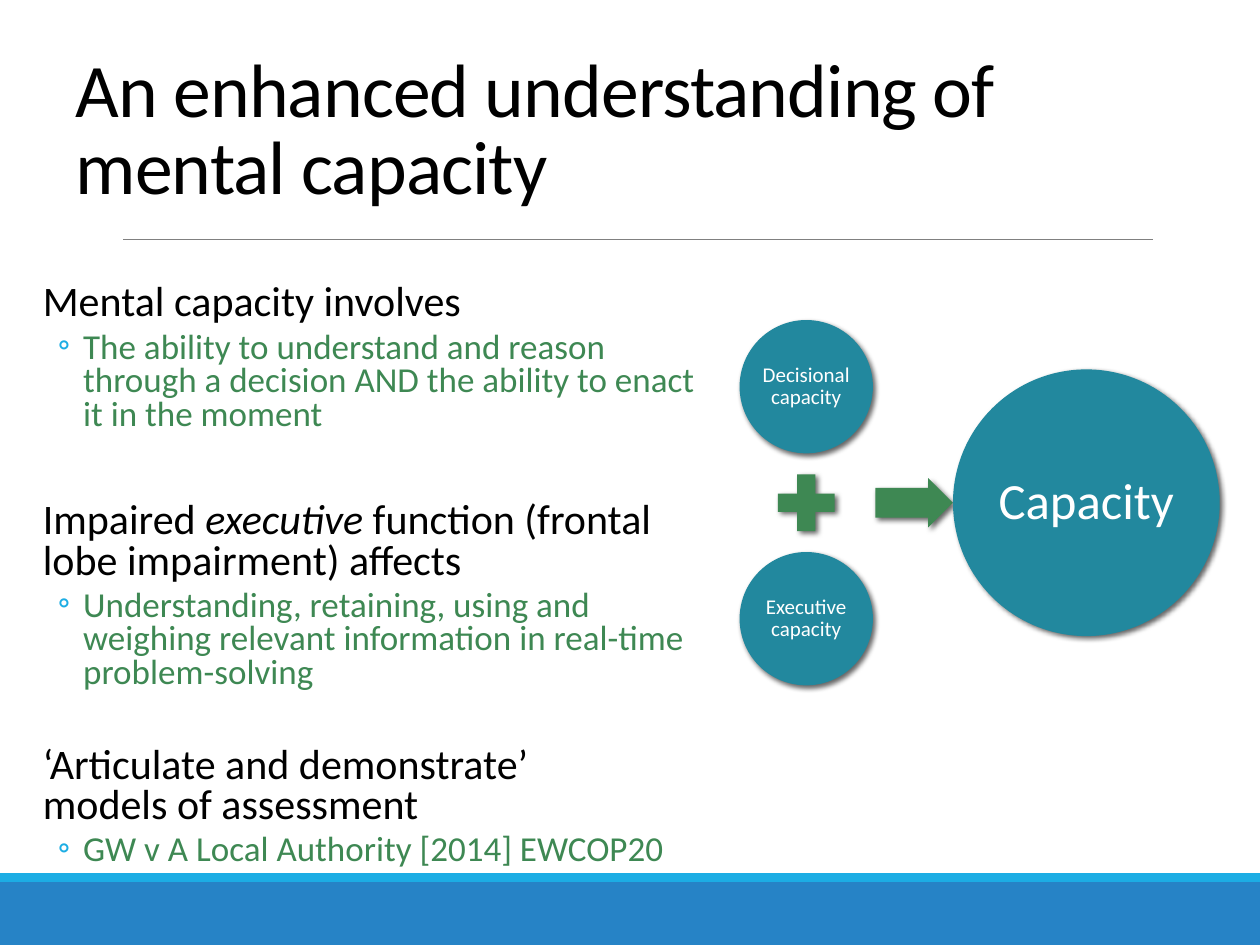
from lxml.etree import SubElement
from pptx import Presentation
from pptx.dml.color import RGBColor
from pptx.enum.shapes import MSO_CONNECTOR, MSO_SHAPE
from pptx.enum.text import MSO_ANCHOR, MSO_AUTO_SIZE, PP_ALIGN
from pptx.oxml.ns import qn
from pptx.util import Inches, Pt

WIDTH, HEIGHT = 10, 7.5
BLACK, WHITE, GREY = "000000", "FFFFFF", "808080"
BLUE, SKY, TEAL, GREEN = "2683C6", "1CADE4", "22889E", "3E8853"

# Each point: heading runs (text, italic), space before, detail line
POINTS = [
    ([("Mental capacity involves", False)], 12,
     "The ability to understand and reason through a decision AND the ability to enact it in the moment"),
    ([("Impaired ", False), ("executive", True),
      (" function (frontal lobe impairment) affects", False)], 35.8,
     "Understanding, retaining, using and weighing relevant information in real-time problem-solving"),
    ([("‘Articulate and demonstrate’\nmodels of assessment", False)], 27.8,
     "GW v A Local Authority [2014] EWCOP20"),
]


def colour(color_format, value):
    color_format.rgb = RGBColor.from_string(value)


def set_format(target, values):
    for name, value in values.items():
        setattr(target, name, value)


def place(shape, box):
    names = ("left", "top", "width", "height")
    set_format(shape, dict(zip(names, map(Inches, box))))


def set_frame(text_frame, horizontal, vertical, anchor):
    set_format(text_frame, {
        "word_wrap": True, "auto_size": MSO_AUTO_SIZE.NONE, "vertical_anchor": anchor,
        "margin_left": Inches(horizontal), "margin_right": Inches(horizontal),
        "margin_top": Inches(vertical), "margin_bottom": Inches(vertical)})


def add_text(paragraph, text, size, value, italic=False):
    for index, line in enumerate(text.split("\n")):
        if index:
            paragraph.add_line_break()
        run = paragraph.add_run()
        run.text = line
        set_format(run.font, {"name": "Calibri", "size": Pt(size), "italic": italic})
        colour(run.font.color, value)
    return run


def add_filled(shapes, preset, box, value):
    shape = shapes.add_shape(preset, *map(Inches, box))
    shape.shadow.inherit = False
    shape.fill.solid()
    colour(shape.fill.fore_color, value)
    shape.line.fill.background()
    return shape


def add_shadow(shape):
    effects = shape.element.spPr.find(qn("a:effectLst"))
    shadow = SubElement(effects, qn("a:outerShdw"), blurRad=str(Pt(3)), dist=str(Pt(2)),
                        dir=str(45 * 60000), algn="tl", rotWithShape="0")
    shadow_colour = SubElement(shadow, qn("a:srgbClr"), val=BLACK)
    SubElement(shadow_colour, qn("a:alpha"), val="60000")


def set_bullet(paragraph, indent, hanging, character=None):
    properties = paragraph._p.get_or_add_pPr()
    properties.set("marL", str(Inches(indent)))
    properties.set("indent", str(Inches(-hanging)))
    if character is None:
        SubElement(properties, qn("a:buNone"))
        return
    bullet_colour = SubElement(properties, qn("a:buClr"))
    SubElement(bullet_colour, qn("a:srgbClr"), val=SKY)
    SubElement(properties, qn("a:buFont"), typeface="Calibri")
    SubElement(properties, qn("a:buChar"), char=character)


def draw_frame(slide):
    # Footer bands and the rule below the title
    add_filled(slide.shapes, MSO_SHAPE.RECTANGLE, (0, 7, WIDTH, 0.5), BLUE)
    add_filled(slide.shapes, MSO_SHAPE.RECTANGLE, (0, 6.93, WIDTH, 0.07), SKY)
    rule = slide.shapes.add_connector(
        MSO_CONNECTOR.STRAIGHT, *map(Inches, (0.98, 1.9, 9.15, 1.9)))
    rule.line.width = Pt(0.5)
    colour(rule.line.color, GREY)
    SubElement(rule.element.spPr, qn("a:effectLst"))


def fill_title(title, box):
    place(title, box)
    set_frame(title.text_frame, 0.1, 0.05, MSO_ANCHOR.BOTTOM)
    paragraph = title.text_frame.paragraphs[0]
    set_format(paragraph, {"alignment": PP_ALIGN.LEFT, "line_spacing": 0.85})
    run = add_text(paragraph, "An enhanced understanding of mental capacity", 43.2, BLACK)
    run.font._element.set("spc", "-50")


def fill_body(body, box):
    place(body, box)
    text_frame = body.text_frame
    set_frame(text_frame, 0, 0.05, MSO_ANCHOR.TOP)
    for index, (runs, space_before, detail) in enumerate(POINTS):
        heading = text_frame.add_paragraph() if index else text_frame.paragraphs[0]
        set_format(heading, {"line_spacing": 0.8, "space_before": Pt(space_before),
                             "space_after": Pt(2)})
        set_bullet(heading, 0.1, 0)
        for text, italic in runs:
            add_text(heading, text, 24, BLACK, italic)
        item = text_frame.add_paragraph()
        set_format(item, {"level": 1, "line_spacing": 0.8, "space_before": Pt(2),
                          "space_after": Pt(4)})
        set_bullet(item, 0.42, 0.2, "◦")
        add_text(item, detail, 20, GREEN)


def draw_equation(slide, box):
    # Two small circles add up to one of twice their diameter
    left, top, width, height = box
    shapes = slide.shapes.add_group_shape().shapes
    small = height / 2.74
    large = small * 2
    middle = top + height / 2
    column = left + small / 2
    right = left + width - large / 2
    arrow_width = width - small - large - 0.02

    def add_centred(preset, x, y, part_width, part_height, value):
        part = add_filled(shapes, preset, (x - part_width / 2, y - part_height / 2,
                                           part_width, part_height), value)
        add_shadow(part)
        return part

    def add_circle(text, x, y, diameter, size):
        circle = add_centred(MSO_SHAPE.OVAL, x, y, diameter, diameter, TEAL)
        set_frame(circle.text_frame, 0, 0, MSO_ANCHOR.MIDDLE)
        paragraph = circle.text_frame.paragraphs[0]
        set_format(paragraph, {"alignment": PP_ALIGN.CENTER, "line_spacing": 0.9})
        add_text(paragraph, text, size, WHITE)

    add_circle("Decisional capacity", column, top + small / 2, small, 12)
    add_centred(MSO_SHAPE.MATH_PLUS, column, middle, small * 0.58, small * 0.58, GREEN)
    add_circle("Executive capacity", column, top + height - small / 2, small, 12)
    arrow = add_centred(MSO_SHAPE.RIGHT_ARROW, right - large / 2 - arrow_width / 2, middle,
                        arrow_width, small * 0.37, GREEN)
    arrow.adjustments[0] = 0.6
    add_circle("Capacity", right, middle, large, 29)


def main():
    presentation = Presentation()
    presentation.slide_width, presentation.slide_height = Inches(WIDTH), Inches(HEIGHT)
    slide = presentation.slides.add_slide(presentation.slide_layouts[1])
    draw_frame(slide)
    fill_title(slide.shapes.title, (0.5, 1.09, 9, 0.63))
    fill_body(slide.placeholders[1], (0.24, 2.21, 5.31, 5.08))
    draw_equation(slide, (5.87, 2.54, 3.81, 2.9))
    presentation.save("out.pptx")


if __name__ == "__main__":
    main()
